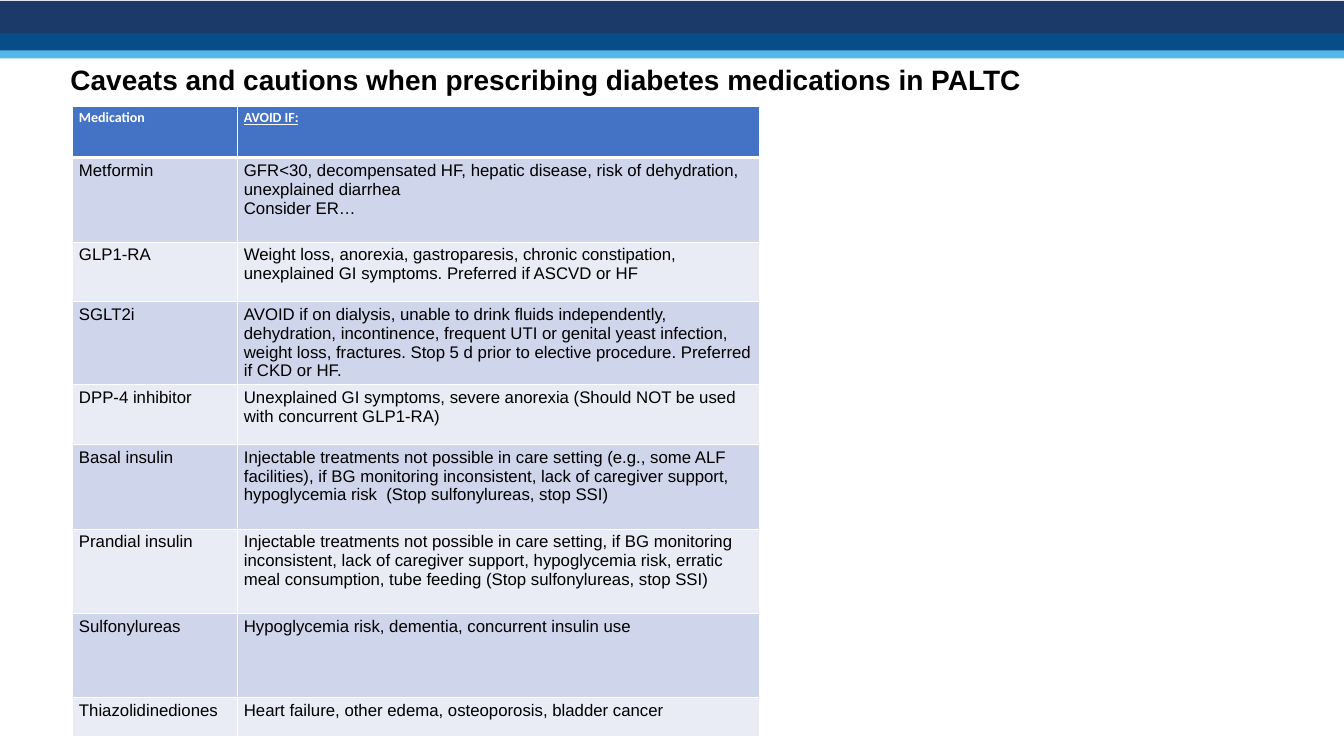
from lxml import etree
from pptx import Presentation
from pptx.dml.color import RGBColor
from pptx.enum.shapes import MSO_SHAPE
from pptx.enum.text import MSO_ANCHOR, MSO_AUTO_SIZE, PP_ALIGN
from pptx.oxml.ns import qn
from pptx.util import Cm, Pt

RECTANGLE = MSO_SHAPE.RECTANGLE
MIDDLE = MSO_ANCHOR.MIDDLE
NO_AUTOFIT = MSO_AUTO_SIZE.NONE
LEFT = PP_ALIGN.LEFT

SLIDE_WIDTH, SLIDE_HEIGHT = 33.87, 19.05
NAVY, BLUE, SKY = "1B3A69", "094D88", "53B7E8"
BLACK, WHITE = "000000", "FFFFFF"
HEADER_FILL, ROW_FILLS = "4472C4", ("CFD5EA", "E9EBF5")
THIN, THICK = 0.75, 3

# Colour, top and height of each band, from back to front
BANDS = [(NAVY, 0.02, 1.07), (SKY, 1.04, 0.43), (BLUE, 0.84, 0.43)]

TITLE = "Caveats and cautions when prescribing diabetes medications in PALTC"
HEADINGS = ("Medication", "AVOID IF:")
HEADING_HEIGHT = 1.3
COLUMN_SHARES = (0.24, 0.76)
# Medication, cautions, row height
MEDICATIONS = [
    ("Metformin",
     "GFR<30, decompensated HF, hepatic disease, risk of dehydration, "
     "unexplained diarrhea\nConsider ER…", 2.13),
    ("GLP1-RA",
     "Weight loss, anorexia, gastroparesis, chronic constipation, "
     "unexplained GI symptoms. Preferred if ASCVD or HF", 1.5),
    ("SGLT2i",
     "AVOID if on dialysis, unable to drink fluids independently, "
     "dehydration, incontinence, frequent UTI or genital yeast infection, "
     "weight loss, fractures. Stop 5 d prior to elective procedure. "
     "Preferred if CKD or HF.", 2.1),
    ("DPP-4 inhibitor",
     "Unexplained GI symptoms, severe anorexia (Should NOT be used with "
     "concurrent GLP1-RA)", 1.5),
    ("Basal insulin",
     "Injectable treatments not possible in care setting (e.g., some ALF "
     "facilities), if BG monitoring inconsistent, lack of caregiver support, "
     "hypoglycemia risk  (Stop sulfonylureas, stop SSI)", 2.13),
    ("Prandial insulin",
     "Injectable treatments not possible in care setting, if BG monitoring "
     "inconsistent, lack of caregiver support, hypoglycemia risk, erratic "
     "meal consumption, tube feeding (Stop sulfonylureas, stop SSI)", 2.13),
    ("Sulfonylureas", "Hypoglycemia risk, dementia, concurrent insulin use", 2.12),
    ("Thiazolidinediones",
     "Heart failure, other edema, osteoporosis, bladder cancer", 0.98),
]


def color(hex_value):
    return RGBColor.from_string(hex_value)


def write(frame, text, size=12, font="Arial", ink=BLACK, bold=False, underline=False):
    """Fill a text frame, one paragraph per line."""
    frame.text = text
    for paragraph in frame.paragraphs:
        paragraph.alignment = LEFT
        for run in paragraph.runs:
            run.font.size, run.font.name = Pt(size), font
            run.font.color.rgb = color(ink)
            run.font.bold, run.font.underline = bold, underline


def set_borders(cell, top=THIN, bottom=THIN):
    """Put white lines on the four sides, ahead of the cell's fill."""
    properties = cell._tc.get_or_add_tcPr()
    widths = {"a:lnL": THIN, "a:lnR": THIN, "a:lnT": top, "a:lnB": bottom}
    for position, (side, width) in enumerate(widths.items()):
        line = etree.Element(qn(side), w=str(Pt(width)))
        fill = etree.SubElement(line, qn("a:solidFill"))
        etree.SubElement(fill, qn("a:srgbClr"), val=WHITE)
        properties.insert(position, line)


def add_banner(slide, left, top, width):
    for fill, offset, height in BANDS:
        band = slide.shapes.add_shape(
            RECTANGLE, Cm(left), Cm(top + offset), Cm(width), Cm(height))
        band.shadow.inherit = False
        band.fill.solid()
        band.fill.fore_color.rgb = color(fill)
        band.line.fill.background()


def place_title(slide, left, top, width, height):
    title = slide.shapes.title
    title.left, title.top = Cm(left), Cm(top)
    title.width, title.height = Cm(width), Cm(height)
    frame = title.text_frame
    frame.auto_size, frame.word_wrap = NO_AUTOFIT, True
    frame.vertical_anchor = MIDDLE
    write(frame, TITLE, size=20, bold=True)


def fill_cell(cell, text, fill, top=THIN, bottom=THIN, **text_format):
    cell.margin_left = cell.margin_right = Cm(0.16)
    cell.margin_top = cell.margin_bottom = Cm(0.09)
    cell.fill.solid()
    cell.fill.fore_color.rgb = color(fill)
    set_borders(cell, top, bottom)
    write(cell.text_frame, text, **text_format)


def add_medication_table(slide, left, top, width):
    heights = [HEADING_HEIGHT] + [height for _, _, height in MEDICATIONS]
    table = slide.shapes.add_table(
        len(heights), len(HEADINGS),
        Cm(left), Cm(top), Cm(width), Cm(sum(heights))).table
    for column, share in zip(table.columns, COLUMN_SHARES):
        column.width = Cm(width * share)
    for row, height in zip(table.rows, heights):
        row.height = Cm(height)

    # Heading row
    for column, heading in enumerate(HEADINGS):
        fill_cell(table.cell(0, column), heading, HEADER_FILL, bottom=THICK, size=10,
                  font="Calibri", ink=WHITE, bold=True, underline=column == 1)

    # One banded row for each medication
    for row, (medication, cautions, _) in enumerate(MEDICATIONS, start=1):
        for column, text in enumerate((medication, cautions)):
            fill_cell(table.cell(row, column), text, ROW_FILLS[(row - 1) % 2],
                      top=THICK if row == 1 else THIN)


def main():
    deck = Presentation()
    deck.slide_width, deck.slide_height = Cm(SLIDE_WIDTH), Cm(SLIDE_HEIGHT)
    slide = deck.slides.add_slide(deck.slide_layouts[5])
    add_banner(slide, 0, 0, SLIDE_WIDTH)
    add_medication_table(slide, 1.83, 2.67, 17.32)
    place_title(slide, 1.52, 1.5, 30.8, 1)
    deck.save("out.pptx")


if __name__ == "__main__":
    main()
